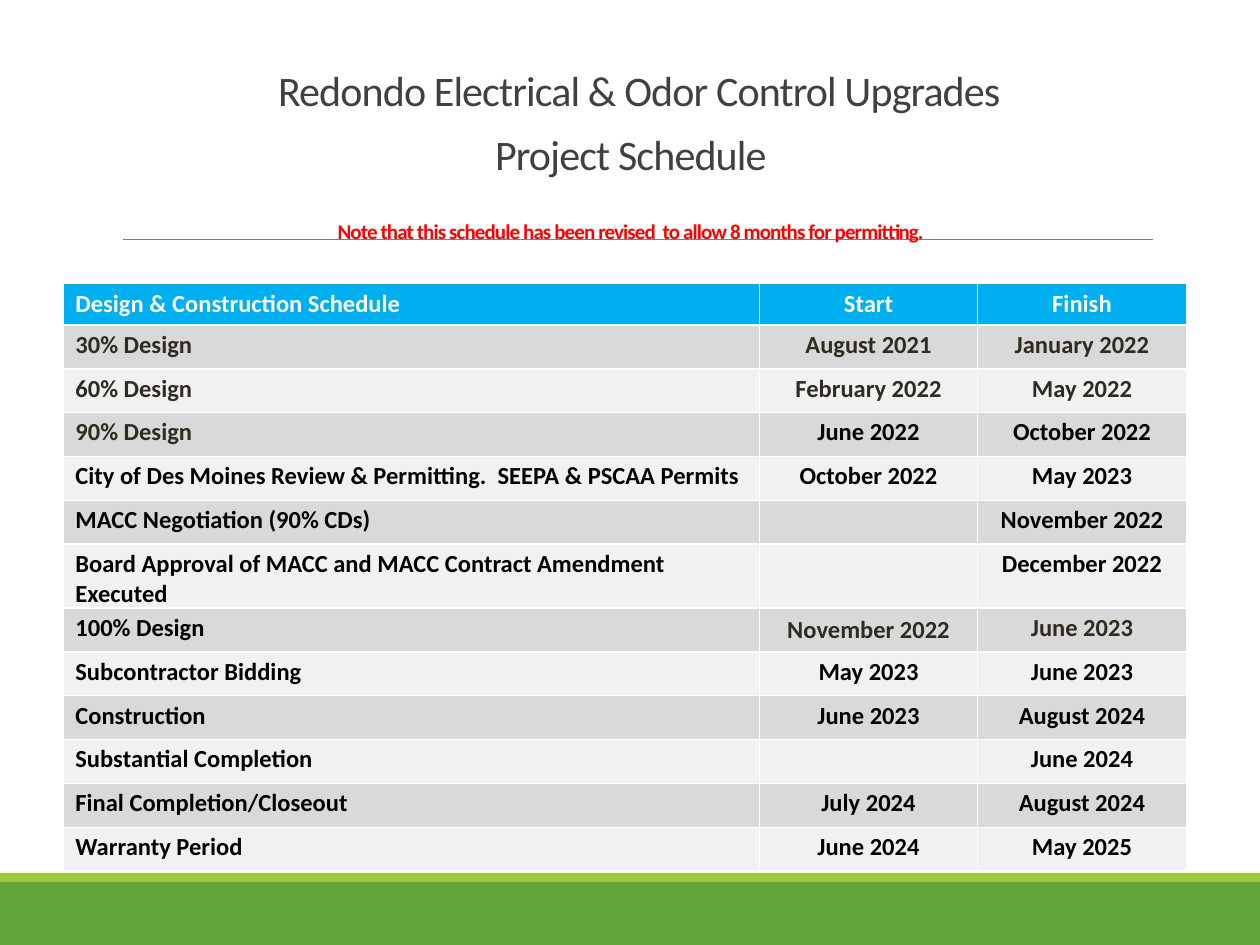
import lxml.etree
import pptx
import pptx.dml.color
import pptx.enum.shapes
import pptx.enum.text
import pptx.oxml.ns
import pptx.util

Cm = pptx.util.Cm
Pt = pptx.util.Pt
ALIGN = pptx.enum.text.PP_ALIGN
ANCHOR = pptx.enum.text.MSO_ANCHOR
qn = pptx.oxml.ns.qn

FONT = "Calibri"
COLORS = {
    "green": "62A437", "lime": "99CA38", "rule": "7E7E7E", "title": "404040",
    "note": "FF0000", "header": "00AFEF", "odd": "D9D9D9", "even": "F1F1F1",
    "white": "FFFFFF", "black": "000000", "brown": "2E2B1F",
}
TITLE_LINES = [
    ("Redondo Electrical & Odor Control Upgrades ", 24, "title", False),
    ("Project Schedule", 24, "title", False),
    ("Note that this schedule has been revised  to allow 8 months for permitting.", 12, "note", True),
]
SCHEDULE = [
    ("Design & Construction Schedule", "Start", "Finish"),
    ("30% Design", "August 2021", "January 2022"),
    ("60% Design", "February 2022", "May 2022"),
    ("90% Design", "June 2022", "October 2022"),
    ("City of Des Moines Review & Permitting.  SEEPA & PSCAA Permits", "October 2022", "May 2023"),
    ("MACC Negotiation (90% CDs)", "", "November 2022"),
    ("Board Approval of MACC and MACC Contract Amendment Executed", "", "December 2022"),
    ("100% Design", "November 2022", "June 2023"),
    ("Subcontractor Bidding", "May 2023", "June 2023"),
    ("Construction", "June 2023", "August 2024"),
    ("Substantial Completion", "", "June 2024"),
    ("Final Completion/Closeout", "July 2024", "August 2024"),
    ("Warranty Period", "June 2024", "May 2025"),
]
BROWN_CELLS = {(1, 0), (1, 1), (1, 2), (2, 0), (2, 1), (2, 2), (3, 0), (7, 1), (7, 2)}
MIDDLE_CELL = (7, 1)
COLUMN_SHARES = (0.62, 0.194, 0.186)


def rgb(name):
    """Return the named colour."""
    return pptx.dml.color.RGBColor.from_string(COLORS[name])


def format_run(run, size, color, bold):
    """Set the font of one run."""
    run.font.name = FONT
    run.font.size = Pt(size)
    run.font.bold = bold
    run.font.color.rgb = rgb(color)


def set_margins(target, top):
    """Keep only a top margin in a cell or text frame."""
    target.margin_left = target.margin_right = target.margin_bottom = 0
    target.margin_top = top


def add_footer(slide, left, top, width, height):
    """Draw the lime strip and the green band below it."""
    strip = Cm(0.18)
    bands = [("lime", top, strip), ("green", top + strip, height - strip)]
    for color, band_top, band_height in bands:
        band = slide.shapes.add_shape(
            pptx.enum.shapes.MSO_SHAPE.RECTANGLE, left, band_top, width, band_height)
        band.shadow.inherit = False
        band.fill.solid()
        band.fill.fore_color.rgb = rgb(color)
        band.line.fill.background()


def add_rule(slide, left, top, width):
    """Draw the thin line under the heading."""
    rule = slide.shapes.add_connector(
        pptx.enum.shapes.MSO_CONNECTOR.STRAIGHT, left, top, left + width, top)
    rule.line.color.rgb = rgb("rule")
    rule.line.width = Pt(0.48)
    lxml.etree.SubElement(rule.element.spPr, qn("a:effectLst"))


def fill_title(slide, left, top, width, height):
    """Place the title and its note in front of the rule."""
    title = slide.shapes.title
    title.element.getparent().append(title.element)
    title.left, title.top, title.width, title.height = left, top, width, height
    text_frame = title.text_frame
    text_frame.word_wrap = True
    text_frame.auto_size = pptx.enum.text.MSO_AUTO_SIZE.SHAPE_TO_FIT_TEXT
    text_frame.vertical_anchor = ANCHOR.TOP
    set_margins(text_frame, Cm(0.28))
    paragraph = text_frame.paragraphs[0]
    paragraph.text = "\n".join(line[0] for line in TITLE_LINES)
    paragraph.alignment = ALIGN.CENTER
    paragraph.line_spacing = Pt(36.7)
    paragraph.space_before = Pt(7.6)
    properties = paragraph._p.get_or_add_pPr()
    properties.set("marL", str(Cm(0.03)))
    properties.set("indent", str(Cm(0.51)))
    for run, (_, size, color, bold) in zip(paragraph.runs, TITLE_LINES):
        format_run(run, size, color, bold)
        run._r.get_or_add_rPr().set("spc", "-50")


def set_borders(cell):
    """Give a cell white borders on all sides."""
    properties = cell._tc.get_or_add_tcPr()
    for index, side in enumerate(("a:lnL", "a:lnR", "a:lnT", "a:lnB")):
        border = lxml.etree.Element(qn(side), w=str(Pt(1)))
        fill = lxml.etree.SubElement(border, qn("a:solidFill"))
        lxml.etree.SubElement(fill, qn("a:srgbClr"), val=COLORS["white"])
        properties.insert(index, border)


def fill_cell(cell, text, row, column):
    """Write and format one schedule cell."""
    cell.fill.solid()
    cell.fill.fore_color.rgb = rgb("header" if row == 0 else "odd" if row % 2 else "even")
    set_borders(cell)
    is_middle = (row, column) == MIDDLE_CELL
    set_margins(cell, 0 if is_middle else Cm(0.1))
    cell.vertical_anchor = ANCHOR.MIDDLE if is_middle else ANCHOR.TOP
    if not text:
        return
    cell.text_frame.text = text
    paragraph = cell.text_frame.paragraphs[0]
    paragraph.space_before = Pt(2.6)
    if column == 0:
        paragraph._p.get_or_add_pPr().set("marL", str(Cm(0.25)))
    else:
        paragraph.alignment = ALIGN.CENTER
    color = "white" if row == 0 else "brown" if (row, column) in BROWN_CELLS else "black"
    format_run(paragraph.runs[0], 14, color, True)


def add_schedule(slide, left, top, width, height):
    """Build the schedule table with a slightly lower header row."""
    frame = slide.shapes.add_table(len(SCHEDULE), len(COLUMN_SHARES), left, top, width, height)
    table = frame.table
    for column, share in zip(table.columns, COLUMN_SHARES):
        column.width = int(width * share)
    header_height = Cm(0.83)
    for index, row in enumerate(table.rows):
        row.height = (height - header_height) // (len(SCHEDULE) - 1) if index else header_height
    for row, texts in enumerate(SCHEDULE):
        for column, text in enumerate(texts):
            fill_cell(table.cell(row, column), text, row, column)


def main():
    """Build and save the schedule slide."""
    presentation = pptx.Presentation()
    presentation.slide_width, presentation.slide_height = Cm(25.4), Cm(19.05)
    slide = presentation.slides.add_slide(presentation.slide_layouts[5])
    add_footer(slide, 0, Cm(17.6), Cm(25.4), Cm(1.45))
    add_rule(slide, Cm(2.48), Cm(4.83), Cm(20.77))
    fill_title(slide, Cm(2.97), Cm(0.74), Cm(19.46), Cm(4.11))
    add_schedule(slide, Cm(1.27), Cm(5.72), Cm(22.65), Cm(11.45))
    presentation.save("out.pptx")


if __name__ == "__main__":
    main()
